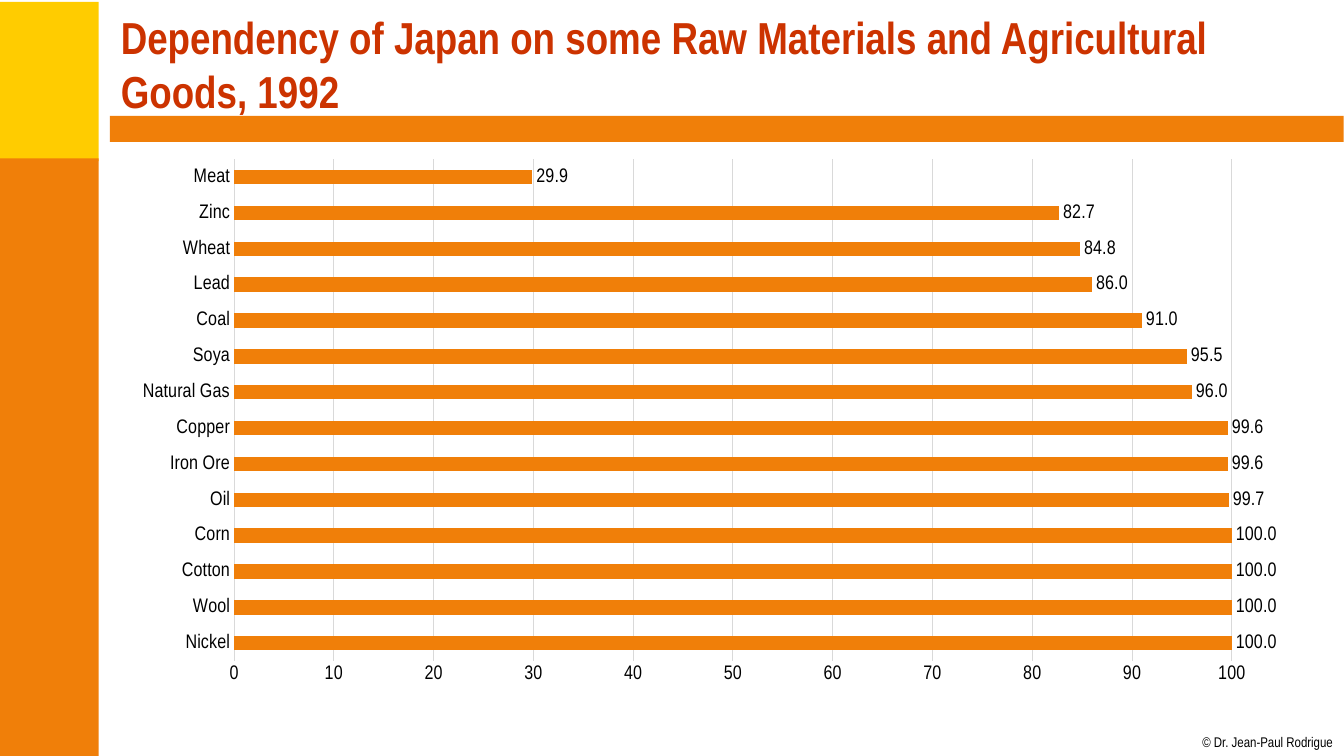
from dataclasses import dataclass

from lxml.etree import SubElement
from pptx import Presentation
from pptx.chart.axis import CategoryAxis, ValueAxis
from pptx.chart.chart import Chart
from pptx.chart.data import CategoryChartData
from pptx.dml.color import RGBColor
from pptx.dml.fill import FillFormat
from pptx.enum.chart import XL_CHART_TYPE, XL_LABEL_POSITION, XL_TICK_MARK
from pptx.enum.shapes import MSO_SHAPE
from pptx.enum.text import MSO_ANCHOR, MSO_AUTO_SIZE, PP_ALIGN
from pptx.oxml.ns import qn
from pptx.slide import Slide
from pptx.text.text import Font
from pptx.util import Cm, Pt

ORANGE, YELLOW, RED = "F07F09", "FFCC00", "CC3300"
BLACK, GRAY = "000000", "D9D9D9"
FONT_NAME = "Arial Narrow"


@dataclass(frozen=True)
class Band:
    left: float
    top: float
    width: float
    height: float
    color: str


BANDS = [
    Band(0, 0.05, 2.49, 4.01, YELLOW),
    Band(0, 3.99, 2.49, 15.06, ORANGE),
    Band(2.77, 2.92, 31.09, 0.66, ORANGE),
]

# Dependency in percent, from the bottom bar to the top one
DEPENDENCY = {
    "Nickel": 100, "Wool": 100, "Cotton": 100, "Corn": 100, "Oil": 99.7,
    "Iron Ore": 99.6, "Copper": 99.6, "Natural Gas": 96, "Soya": 95.5,
    "Coal": 91, "Lead": 86, "Wheat": 84.8, "Zinc": 82.7, "Meat": 29.9,
}
PLOT_LAYOUT = {
    "layoutTarget": "inner", "xMode": "edge", "yMode": "edge",
    "x": 0.102, "y": 0.026, "w": 0.825, "h": 0.86,
}


def set_color(fill: FillFormat, color: str) -> None:
    fill.solid()
    fill.fore_color.rgb = RGBColor.from_string(color)


def set_values(target: object, values: dict) -> None:
    for name, value in values.items():
        setattr(target, name, value)


def set_font(font: Font, size: float, color: str = BLACK, bold: bool = False) -> None:
    set_values(font, {"name": FONT_NAME, "size": Pt(size), "bold": bold})
    set_color(font.fill, color)


def add_band(page: Slide, band: Band) -> None:
    box = page.shapes.add_shape(
        MSO_SHAPE.RECTANGLE, Cm(band.left), Cm(band.top), Cm(band.width), Cm(band.height))
    box.shadow.inherit = False
    set_color(box.fill, band.color)
    box.line.fill.background()


def add_title(page: Slide, text: str) -> None:
    title = page.shapes.title
    set_values(title, {"left": Cm(2.79), "top": Cm(0.28),
                       "width": Cm(30.48), "height": Cm(2.64)})
    set_values(title.text_frame, {"text": text, "word_wrap": True,
                                  "auto_size": MSO_AUTO_SIZE.NONE,
                                  "vertical_anchor": MSO_ANCHOR.MIDDLE})
    para = title.text_frame.paragraphs[0]
    para.alignment = PP_ALIGN.LEFT
    set_font(para.runs[0].font, 32, RED, bold=True)


def add_credit(page: Slide, text: str) -> None:
    box = page.shapes.add_textbox(Cm(30.3), Cm(18.49), Cm(3.33), Cm(0.43))
    set_values(box.text_frame, {"margin_left": 0, "margin_top": 0, "margin_right": 0,
                                "margin_bottom": 0, "word_wrap": False,
                                "auto_size": MSO_AUTO_SIZE.SHAPE_TO_FIT_TEXT})
    span = box.text_frame.paragraphs[0].add_run()
    span.text = text
    set_font(span.font, 10)


def place_plot(chart: Chart) -> None:
    plot_area = chart.element.find(".//" + qn("c:plotArea"))
    for old_layout in plot_area.findall(qn("c:layout")):
        plot_area.remove(old_layout)
    layout = SubElement(plot_area, qn("c:layout"))
    plot_area.insert(0, layout)
    manual = SubElement(layout, qn("c:manualLayout"))
    for name, value in PLOT_LAYOUT.items():
        SubElement(manual, qn(f"c:{name}")).set("val", str(value))


def format_axis(axis: CategoryAxis | ValueAxis) -> None:
    set_values(axis, {"major_tick_mark": XL_TICK_MARK.NONE,
                      "minor_tick_mark": XL_TICK_MARK.NONE})
    set_font(axis.tick_labels.font, 14)


def add_dependency_chart(page: Slide) -> None:
    data = CategoryChartData()
    data.categories = list(DEPENDENCY)
    data.add_series("Series 1", list(DEPENDENCY.values()))
    chart = page.shapes.add_chart(
        XL_CHART_TYPE.BAR_CLUSTERED, Cm(2.79), Cm(3.63), Cm(30.48), Cm(14.71), data).chart
    set_values(chart, {"has_legend": False, "has_title": False})
    set_font(chart.font, 14)
    place_plot(chart)

    # Axes and grid
    categories, values = chart.category_axis, chart.value_axis
    format_axis(categories)
    format_axis(values)
    set_values(values, {"minimum_scale": 0, "maximum_scale": 100, "major_unit": 10,
                        "has_major_gridlines": True})
    values.format.line.fill.background()
    categories.has_major_gridlines = False
    for line in (categories.format.line, values.major_gridlines.format.line):
        line.width = Pt(0.75)
        set_color(line.fill, GRAY)

    # Bars and their labels
    plot = chart.plots[0]
    set_values(plot, {"gap_width": 150, "vary_by_categories": False})
    bars = plot.series[0]
    set_color(bars.format.fill, ORANGE)
    labels = bars.data_labels
    set_values(labels, {"show_value": True, "number_format": "#,##0.0",
                        "number_format_is_linked": False,
                        "position": XL_LABEL_POSITION.OUTSIDE_END})
    set_font(labels.font, 14)


def main() -> None:
    deck = Presentation()
    set_values(deck, {"slide_width": Cm(33.87), "slide_height": Cm(19.05)})
    page = deck.slides.add_slide(deck.slide_layouts.get_by_name("Title Only"))
    set_color(page.background.fill, "FFFFFF")
    for band in BANDS:
        add_band(page, band)
    add_credit(page, "© Dr. Jean-Paul Rodrigue")
    add_title(page, "Dependency of Japan on some Raw Materials and Agricultural Goods, 1992")
    add_dependency_chart(page)
    deck.save("out.pptx")


if __name__ == "__main__":
    main()
